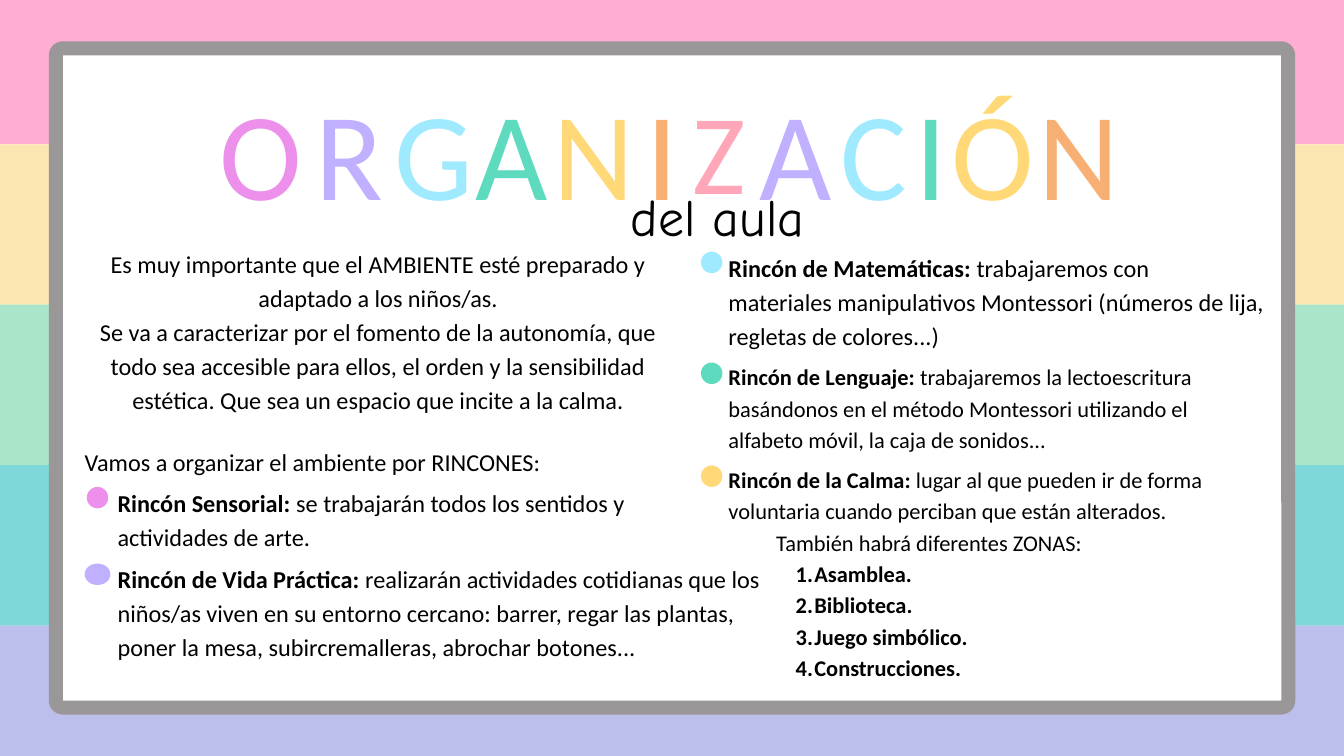
from collections import namedtuple
from dataclasses import dataclass

from lxml import etree
from pptx import Presentation
from pptx.dml.color import RGBColor
from pptx.enum import shapes, text
from pptx.oxml import ns
from pptx.util import Pt

Box = namedtuple("Box", "left top width height")
ALIGN = text.PP_ALIGN


@dataclass(frozen=True)
class Theme:
    bands: tuple = ("FF8BC0", "FADA8F", "85DAB1", "48C8CB", "A0A4E3")
    band_opacity: int = 70
    white: str = "FFFFFF"
    frame: str = "999797"
    ink: str = "000000"
    orchid: str = "ED90EC"
    lilac: str = "C1AFFF"
    sky: str = "9FEAFF"
    mint: str = "5EDABF"
    yellow: str = "FFD978"
    orange: str = "F8AF74"
    rose: str = "FFA6B9"
    body_font: str = "Calibri"
    script_font: str = "Comic Neue"
    letter_size: float = 133.8
    small_letter_size: float = 122
    subtitle_size: float = 55.6
    body_size: float = 26
    compact_size: float = 24
    leading: float = 1.4


THEME = Theme()


def apply(target, values):
    for name, value in values.items():
        setattr(target, name, value)


def add_filled(slide, kind, box, color):
    shape = slide.shapes.add_shape(kind, *map(Pt, box))
    shape.shadow.inherit = False
    shape.fill.solid()
    shape.fill.fore_color.rgb = RGBColor.from_string(color)
    shape.line.fill.background()
    return shape


def add_text(slide, box, paragraphs, size=THEME.body_size, color=THEME.ink,
             font=THEME.body_font, align=ALIGN.LEFT):
    """Add paragraphs, each a list of (words, bold) runs or a plain string."""
    frame = slide.shapes.add_textbox(*map(Pt, box)).text_frame
    apply(frame, {"word_wrap": True, "auto_size": text.MSO_AUTO_SIZE.NONE,
                  "margin_left": 0, "margin_right": 0,
                  "margin_top": 0, "margin_bottom": 0})
    for index, runs in enumerate(paragraphs):
        paragraph = frame.add_paragraph() if index else frame.paragraphs[0]
        apply(paragraph, {"alignment": align,
                          "line_spacing": Pt(round(size * THEME.leading, 1))})
        for words, bold in [(runs, False)] if isinstance(runs, str) else runs:
            run = paragraph.add_run()
            run.text = words
            apply(run.font, {"size": Pt(size), "name": font, "bold": bold})
            run.font.color.rgb = RGBColor.from_string(color)
    return frame


def number(paragraph, margin, hanging):
    paragraph.level = 1
    properties = paragraph._p.get_or_add_pPr()
    properties.set("marL", str(Pt(margin)))
    properties.set("indent", str(-Pt(hanging)))
    etree.SubElement(properties, ns.qn("a:buAutoNum"), type="arabicPeriod")


def add_bands(slide, box):
    height = box.height / len(THEME.bands)
    for index, color in enumerate(THEME.bands):
        band = Box(box.left, box.top + index * height, box.width, height)
        shape = add_filled(slide, shapes.MSO_SHAPE.RECTANGLE, band, color)
        fill = shape._element.spPr.find(ns.qn("a:solidFill"))
        etree.SubElement(fill[0], ns.qn("a:alpha"),
                         val=str(THEME.band_opacity * 1000))


def add_board(slide, box):
    board = add_filled(slide, shapes.MSO_SHAPE.ROUNDED_RECTANGLE, box, THEME.white)
    board.adjustments[0] = 0.01
    board.line.color.rgb = RGBColor.from_string(THEME.frame)
    board.line.width = Pt(15)


def add_title(slide, box):
    add_text(slide, Box(box.left + 334, box.top + 133, 399, 75), ["del aula"],
             THEME.subtitle_size, font=THEME.script_font, align=ALIGN.CENTER)
    letters = (  # letter, offset, width, color
        ("O", 0, 77.8, THEME.orchid), ("R", 93.6, 90, THEME.lilac),
        ("G", 180.8, 97.9, THEME.sky), ("A", 253.5, 118.8, THEME.mint),
        ("N", 357.2, 80.6, THEME.yellow), ("I", 452.2, 43.9, THEME.orange),
        ("Z", 499, 71.3, THEME.rose), ("A", 571.7, 90, THEME.lilac),
        ("C", 651.6, 97.9, THEME.sky), ("I", 702.8, 118.8, THEME.mint),
        ("Ó", 784.1, 80.6, THEME.yellow), ("N", 871.2, 97.9, THEME.orange))
    for letter, offset, width, color in letters:
        small = letter == "Z"
        inset = 8.5 if small else 0
        add_text(slide, Box(box.left + offset, box.top + inset, width,
                            box.height - 2 * inset), [letter],
                 THEME.small_letter_size if small else THEME.letter_size,
                 color, align=ALIGN.CENTER)


def add_corner(slide, box, indent, color, name, lines, size=THEME.body_size,
               dot_width=23):
    """Place a coloured dot and, indented beside it, a corner's description."""
    dot = Box(box.left + 0.39 * indent - dot_width / 2, box.top + 4, dot_width, 23)
    add_filled(slide, shapes.MSO_SHAPE.OVAL, dot, color)
    first, *rest = lines
    add_text(slide, Box(box.left + indent, box.top, box.width - indent, box.height),
             [[(name, True), (first, False)], *rest], size)


def add_left_column(slide, box):
    left, top = box.left, box.top
    add_text(slide, Box(left, top, 629, 215), [
        "Es muy importante que el AMBIENTE esté preparado y adaptado a los niños/as.",
        "Se va a caracterizar por el fomento de la autonomía, que todo sea accesible "
        "para ellos, el orden y la sensibilidad estética. Que sea un espacio que "
        "incite a la calma."], align=ALIGN.CENTER)
    add_text(slide, Box(left, top + 211.7, 579, 106),
             ["Vamos a organizar el ambiente por RINCONES:"])
    indent = 35.3
    add_corner(slide, Box(left, top + 255.6, 579 + indent, 71), indent, THEME.orchid,
               "Rincón Sensorial:",
               [" se trabajarán todos los sentidos y actividades de arte."])
    add_corner(slide, Box(left, top + 337.7, 694 + indent, 143), indent, THEME.lilac,
               "Rincón de Vida Práctica:",
               [" realizarán actividades cotidianas que los niños/as viven en su "
                "entorno cercano: barrer, regar las plantas, poner la mesa, "
                "subircremalleras, abrochar botones..."], dot_width=27.6)


def add_right_column(slide, box):
    corners = (
        (0, 108, THEME.sky, THEME.body_size, "Rincón de Matemáticas:",
         [" trabajaremos con", "materiales manipulativos Montessori (números de "
          "lija, regletas de colores...)"]),
        (118.8, 99, THEME.mint, THEME.compact_size, "Rincón de Lenguaje:",
         [" trabajaremos la lectoescritura",
          "basándonos en el método Montessori utilizando el",
          "alfabeto móvil, la caja de sonidos..."]),
        (229, 67, THEME.yellow, THEME.compact_size, "Rincón de la Calma: ",
         ["lugar al que pueden ir de forma voluntaria cuando perciban que están "
          "alterados."]))
    for offset, height, color, size, name, lines in corners:
        add_corner(slide, Box(box.left, box.top + offset, box.width, height), 29.5,
                   color, name, lines, size)
    zones = ("Asamblea.", "Biblioteca.", "Juego simbólico.", "Construcciones.")
    frame = add_text(slide, Box(box.left + 80.6, box.top + 296, 446, 168),
                     ["También habrá diferentes ZONAS:",
                      *([(zone, True)] for zone in zones)],
                     THEME.compact_size, align=ALIGN.JUSTIFY)
    for paragraph in frame.paragraphs[1:]:
        number(paragraph, 41, 20)


def main():
    presentation = Presentation()
    apply(presentation, {"slide_width": Pt(1440), "slide_height": Pt(810)})
    slide = presentation.slides.add_slide(presentation.slide_layouts[6])
    add_bands(slide, Box(-75.6, -17.3, 1591.2, 859.5))
    add_board(slide, Box(59.8, 51.8, 1320.5, 706.3))
    add_title(slide, Box(235.4, 54, 969, 176.4))
    add_left_column(slide, Box(90.7, 262.1, 729, 481))
    add_right_column(slide, Box(751, 265.7, 608.5, 464))
    presentation.save("out.pptx")


if __name__ == "__main__":
    main()
